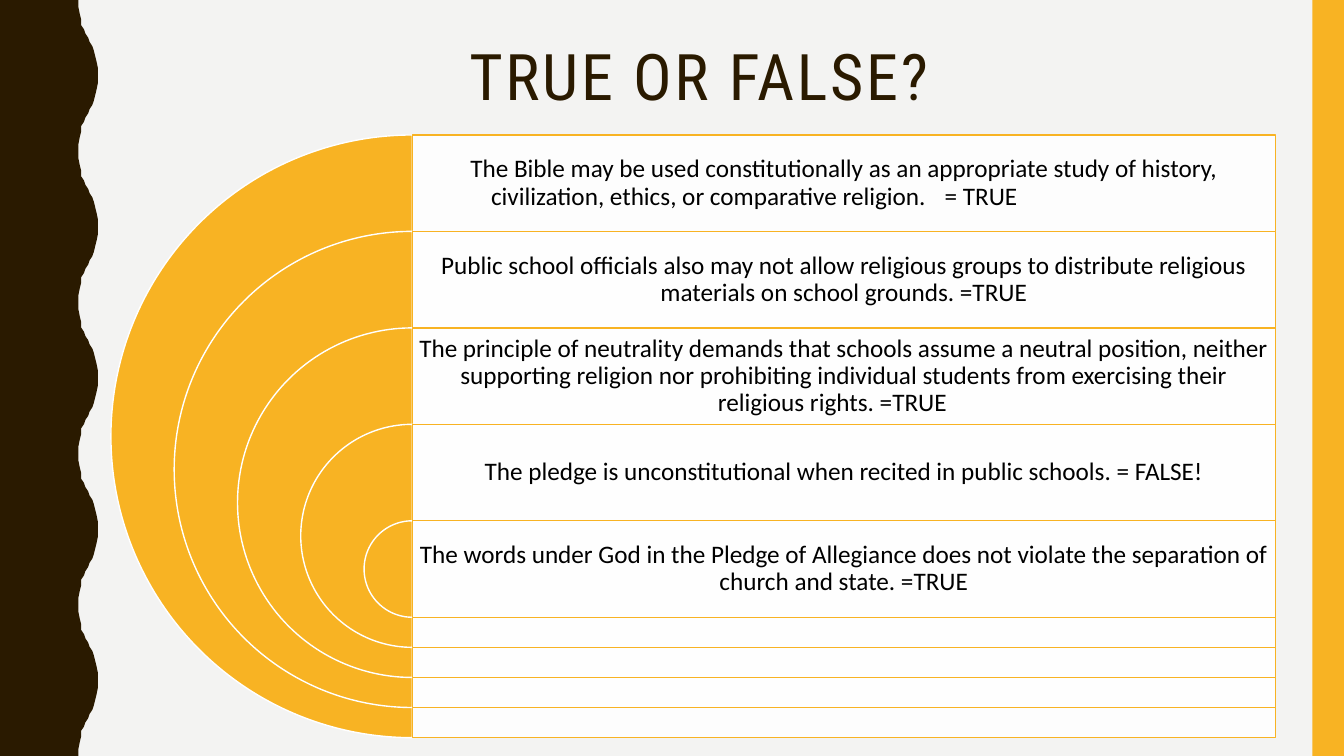
from lxml import etree
from pptx import Presentation
from pptx.dml.color import RGBColor
from pptx.enum.shapes import MSO_SHAPE
from pptx.enum.text import MSO_ANCHOR, MSO_AUTO_SIZE, PP_ALIGN
from pptx.oxml.ns import qn
from pptx.util import Pt

PIE, RECTANGLE = MSO_SHAPE.PIE, MSO_SHAPE.RECTANGLE
MIDDLE, CENTER = MSO_ANCHOR.MIDDLE, PP_ALIGN.CENTER
NO_AUTOFIT = MSO_AUTO_SIZE.NONE

BROWN = RGBColor(0x2A, 0x1A, 0x00)
GOLD = RGBColor(0xF8, 0xB3, 0x23)
PAPER = RGBColor(0xF3, 0xF3, 0xF2)
WHITE = RGBColor(0xFF, 0xFF, 0xFF)
BLACK = RGBColor(0x00, 0x00, 0x00)

SLIDE_WIDTH, SLIDE_HEIGHT = 960, 540
STATEMENTS = [
    "The Bible may be used constitutionally as an appropriate study of history, "
    "civilization, ethics, or comparative religion.\t= TRUE\t\t\t\t",
    "Public school officials also may not allow religious groups to distribute "
    "religious materials on school grounds. =TRUE",
    "The principle of neutrality demands that schools assume a neutral position, "
    "neither supporting religion nor prohibiting individual students from "
    "exercising their religious rights. =TRUE\t",
    "The pledge is unconstitutional when recited in public schools. = FALSE!",
    "The words under God in the Pledge of Allegiance does not violate the "
    "separation of church and state. =TRUE",
]


def add_filled_shape(kind, left, top, width, height, fill, line=None):
    shape = slide.shapes.add_shape(kind, Pt(left), Pt(top), Pt(width), Pt(height))
    shape.shadow.inherit = False
    shape.fill.solid()
    shape.fill.fore_color.rgb = fill
    if line is None:
        shape.line.fill.background()
    else:
        shape.line.color.rgb = line
        shape.line.width = Pt(1)
    return shape


presentation = Presentation()
presentation.slide_width = Pt(SLIDE_WIDTH)
presentation.slide_height = Pt(SLIDE_HEIGHT)
slide = presentation.slides.add_slide(presentation.slide_layouts[5])
slide.background.fill.solid()
slide.background.fill.fore_color.rgb = PAPER

# Wavy left edge: half a wave as (x, y), mirrored and repeated down the slide
WAVE_PERIOD = 108
half_wave = [
    (56.2, 0), (56.2, 5), (56.9, 10), (57.6, 14.4), (58.5, 18), (59.8, 21),
    (61.2, 24), (62.6, 27), (64.1, 30), (65.5, 33), (67, 36), (68.4, 39.6),
    (69.1, 44), (69.8, 49), (69.8, 54),
]
full_wave = half_wave + [(x, WAVE_PERIOD - y) for x, y in reversed(half_wave[:-1])]
edge = [
    (x, y + start)
    for start in range(0, SLIDE_HEIGHT, WAVE_PERIOD)
    for x, y in full_wave
]
builder = slide.shapes.build_freeform(0, 0, scale=Pt(1))
builder.add_line_segments(edge + [(0, SLIDE_HEIGHT)], close=True)
wave = builder.convert_to_shape()
wave.shadow.inherit = False
wave.fill.solid()
wave.fill.fore_color.rgb = BROWN
wave.line.fill.background()

add_filled_shape(RECTANGLE, 937.5, 0, 22.5, SLIDE_HEIGHT, GOLD)

title = slide.shapes.title
title.left, title.top, title.width, title.height = Pt(98.6), Pt(30.2), Pt(801.4), Pt(54)
title.text_frame.text = "TRUE OR FALSE?"
title.text_frame.auto_size = NO_AUTOFIT
title.text_frame.vertical_anchor = MIDDLE
heading = title.text_frame.paragraphs[0]
heading.alignment = CENTER
heading.line_spacing = 0.9
heading.font.name = "Roboto Condensed"
heading.font.size = Pt(45.9)
heading.font.color.rgb = BROWN
heading.runs[0].font._element.set("spc", "200")

# Nested half circles, each with a panel as tall as the circle
PANEL_LEFT, PANEL_WIDTH = 294.5, 616.5
FIRST_TOP, ROW_HEIGHT = 96.4, 68.9
OUTER_DIAMETER, DIAMETER_STEP = 430.5, 90.4
INSET = Pt(5)

for row, statement in enumerate(STATEMENTS):
    top = FIRST_TOP + row * ROW_HEIGHT
    diameter = OUTER_DIAMETER - row * DIAMETER_STEP

    half_circle = add_filled_shape(
        PIE, PANEL_LEFT - diameter / 2, top, diameter, diameter, GOLD, WHITE)
    half_circle.adjustments[0] = 54
    half_circle.adjustments[1] = 162

    panel = add_filled_shape(
        RECTANGLE, PANEL_LEFT, top, PANEL_WIDTH, diameter, WHITE, GOLD)
    panel_color = panel.fill._xPr.find(qn("a:solidFill"))[0]
    etree.SubElement(panel_color, qn("a:alpha"), val="90000")

    text_box = slide.shapes.add_textbox(
        Pt(PANEL_LEFT), Pt(top), Pt(PANEL_WIDTH), Pt(ROW_HEIGHT))
    frame = text_box.text_frame
    frame.word_wrap = True
    frame.vertical_anchor = MIDDLE
    frame.margin_left = frame.margin_right = INSET
    frame.margin_top = frame.margin_bottom = INSET
    frame.text = statement
    paragraph = frame.paragraphs[0]
    paragraph.alignment = CENTER
    paragraph.line_spacing = 0.9
    paragraph.font.name = "Calibri"
    paragraph.font.size = Pt(18)
    paragraph.font.color.rgb = BLACK

presentation.save("out.pptx")
